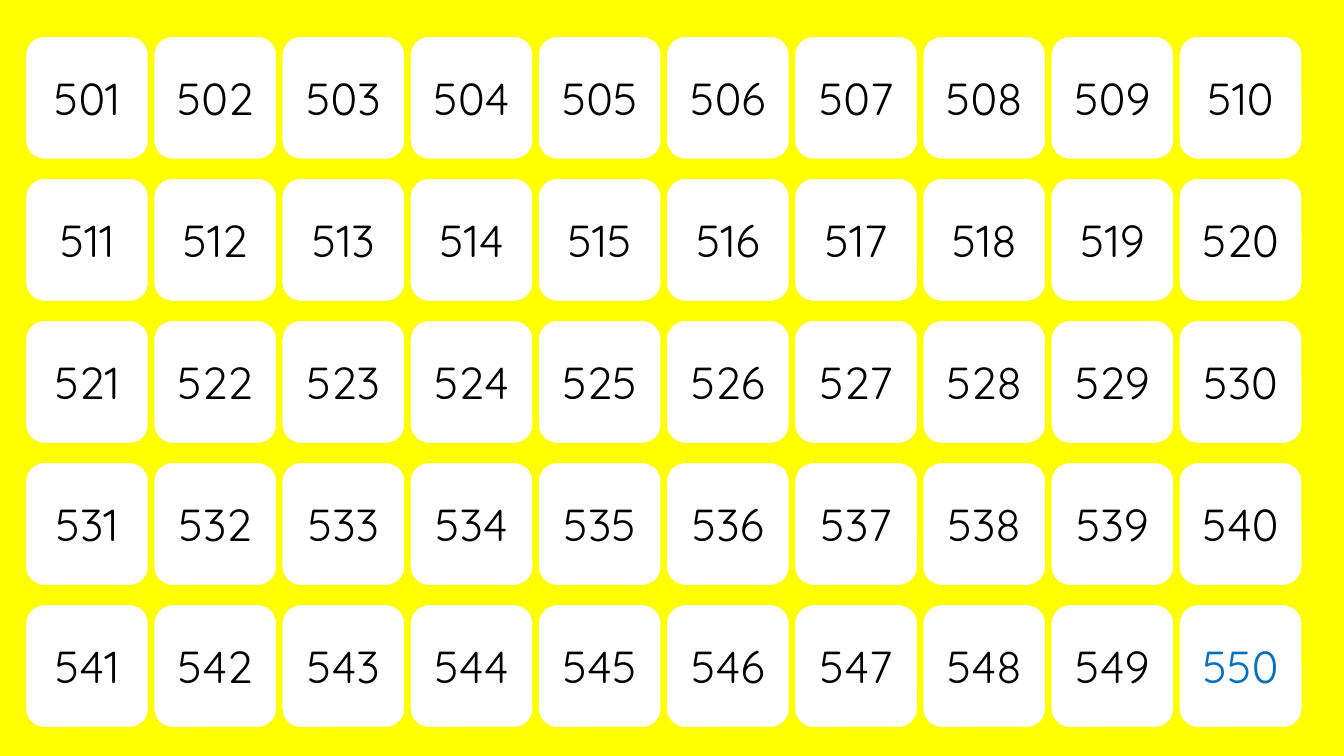
import dataclasses

import pptx
import pptx.dml.color
import pptx.enum.shapes
import pptx.enum.text
import pptx.slide
import pptx.util

Cm = pptx.util.Cm
RGBColor = pptx.dml.color.RGBColor

YELLOW = RGBColor(0xFF, 0xFF, 0x00)
WHITE = RGBColor(0xFF, 0xFF, 0xFF)
BLACK = RGBColor(0x00, 0x00, 0x00)
BLUE = RGBColor(0x00, 0x70, 0xC0)

FIRST, LAST, COLUMNS = 501, 550, 10
LEFT, TOP = 0.58, 0.85
TILE_SIZE = 3.23
ROW_PITCH = 3.58

FONT_FORMAT = {"name": "Quicksand", "size": pptx.util.Pt(32)}
FRAME_FORMAT = {
    "vertical_anchor": pptx.enum.text.MSO_ANCHOR.MIDDLE,
    "word_wrap": True,
}


@dataclasses.dataclass(frozen=True)
class NumberTile:
    number: int
    color: RGBColor

    @property
    def left(self) -> float:
        return LEFT + (self.number - FIRST) % COLUMNS * TILE_SIZE

    @property
    def top(self) -> float:
        return TOP + (self.number - FIRST) // COLUMNS * ROW_PITCH


def apply_format(target: object, values: dict) -> None:
    for name, value in values.items():
        setattr(target, name, value)


def draw_tile(slide: pptx.slide.Slide, tile: NumberTile) -> None:
    sp = slide.shapes.add_shape(
        pptx.enum.shapes.MSO_SHAPE.ROUNDED_RECTANGLE,
        Cm(tile.left), Cm(tile.top), Cm(TILE_SIZE), Cm(TILE_SIZE),
    )
    sp.shadow.inherit = False
    sp.fill.solid()
    sp.fill.fore_color.rgb = WHITE
    sp.line.color.rgb = YELLOW
    sp.line.width = pptx.util.Pt(4.5)

    tf = sp.text_frame
    apply_format(tf, FRAME_FORMAT)
    p = tf.paragraphs[0]
    p.alignment = pptx.enum.text.PP_ALIGN.CENTER
    r = p.add_run()
    r.text = str(tile.number)
    apply_format(r.font, FONT_FORMAT)
    r.font.color.rgb = tile.color


def main() -> None:
    prs = pptx.Presentation()
    prs.slide_width, prs.slide_height = Cm(33.87), Cm(19.05)
    slide = prs.slides.add_slide(prs.slide_layouts.get_by_name("Blank"))
    slide.background.fill.solid()
    slide.background.fill.fore_color.rgb = YELLOW

    for number in range(FIRST, LAST + 1):
        draw_tile(slide, NumberTile(number, BLUE if number == LAST else BLACK))

    prs.save("out.pptx")


if __name__ == "__main__":
    main()
